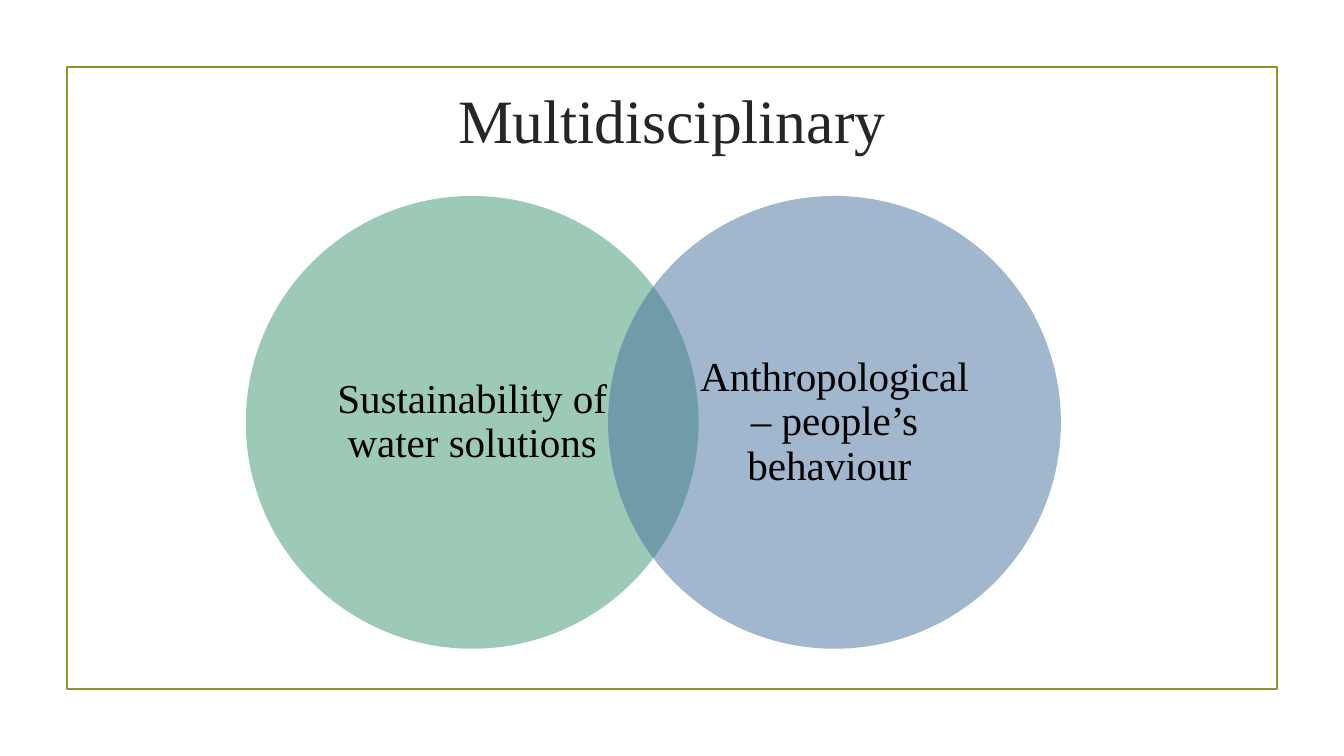
from lxml import etree
from pptx import Presentation
from pptx.dml.color import RGBColor
from pptx.enum.shapes import MSO_SHAPE
from pptx.enum.text import MSO_ANCHOR, PP_ALIGN
from pptx.oxml.ns import qn
from pptx.util import Pt

RECTANGLE, OVAL = MSO_SHAPE.RECTANGLE, MSO_SHAPE.OVAL
MIDDLE, BOTTOM = MSO_ANCHOR.MIDDLE, MSO_ANCHOR.BOTTOM
CENTER = PP_ALIGN.CENTER
FONT = "Times New Roman"
COLOURS = {
    "frame": "83992A",
    "green": "3C9770",
    "blue": "44709D",
    "title": "262626",
    "label": "000000",
}


def add_text(page, text, place, size, colour, anchor, insets):
    box = page.shapes.add_textbox(*[Pt(length) for length in place])
    frame = box.text_frame
    frame.word_wrap = True
    frame.vertical_anchor = anchor
    frame.margin_left = frame.margin_right = Pt(insets[0])
    frame.margin_top = frame.margin_bottom = Pt(insets[1])
    para = frame.paragraphs[0]
    para.text = text
    para.alignment = CENTER
    para.font.name = FONT
    para.font.size = Pt(size)
    para.font.color.rgb = RGBColor.from_string(COLOURS[colour])
    return para


deck = Presentation()
deck.slide_width, deck.slide_height = Pt(720), Pt(405)
page = deck.slides.add_slide(deck.slide_layouts[6])

border = page.shapes.add_shape(RECTANGLE, Pt(36), Pt(36), Pt(648), Pt(333))
border.shadow.inherit = False
border.fill.background()
border.line.color.rgb = RGBColor.from_string(COLOURS["frame"])
border.line.width = Pt(1.25)

diameter = 242.6
label_side = 171.6
label_offset = (diameter - label_side) / 2
left, top = 131.7, 105
step = diameter * 0.8
circles = [
    ("Sustainability of water solutions", "green"),
    ("Anthropological – people’s behaviour ", "blue"),
]
for index, (label, colour) in enumerate(circles):
    x = left + index * step
    circle = page.shapes.add_shape(OVAL, Pt(x), Pt(top), Pt(diameter), Pt(diameter))
    circle.shadow.inherit = False
    circle.line.fill.background()
    circle.fill.solid()
    circle.fill.fore_color.rgb = RGBColor.from_string(COLOURS[colour])
    tint = circle.fill._xPr.find(qn("a:solidFill"))[0]
    etree.SubElement(tint, qn("a:alpha")).set("val", "50000")
    place = (x + label_offset, top + label_offset, label_side, label_side)
    para = add_text(page, label, place, 22, "label", MIDDLE, (13, 2))
    para.line_spacing = 0.9

add_text(page, "Multidisciplinary", (24.5, 35.3, 671, 55.4), 33, "title", BOTTOM, (7.2, 7.2))

deck.save("out.pptx")
